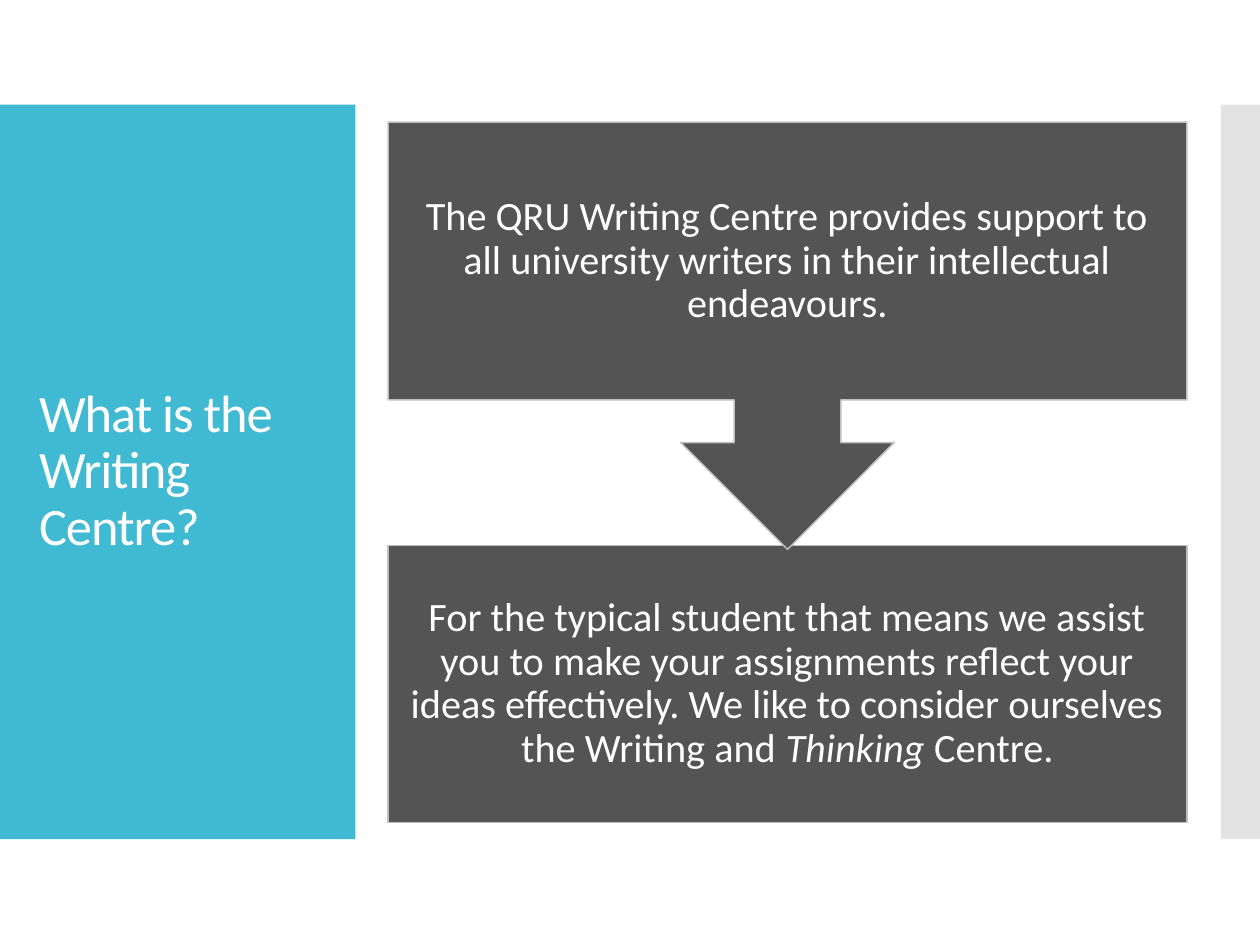
"""Build the Writing Centre slide with a title panel and two linked boxes."""
from pptx import Presentation
from pptx.dml.color import RGBColor
from pptx.enum.shapes import MSO_SHAPE
from pptx.enum.text import MSO_ANCHOR, MSO_AUTO_SIZE, PP_ALIGN
from pptx.oxml.ns import qn
from pptx.util import Inches, Pt
from lxml.etree import SubElement


class Theme:
    font = "Calibri"
    teal = RGBColor(0x40, 0xBA, 0xD2)
    side = RGBColor(0xC8, 0xC8, 0xC8)
    dark = RGBColor(0x54, 0x54, 0x54)
    edge = RGBColor(0xBF, 0xBF, 0xBF)
    white = RGBColor(0xFF, 0xFF, 0xFF)
    head = Pt(30)
    body = Pt(23)


def write(shape, *parts, size=Theme.body, align=PP_ALIGN.CENTER, inset=0.18, space=0):
    frame = shape.text_frame
    frame.word_wrap = True
    frame.auto_size = MSO_AUTO_SIZE.NONE
    frame.vertical_anchor = MSO_ANCHOR.MIDDLE
    frame.margin_left = frame.margin_right = Inches(inset)
    frame.margin_top = frame.margin_bottom = Inches(inset)
    para = frame.paragraphs[0]
    para.alignment = align
    para.line_spacing = 0.9
    for text, slant in parts:
        run = para.add_run()
        run.text = text
        run.font.name = Theme.font
        run.font.size = size
        run.font.italic = slant
        run.font.color.rgb = Theme.white
        if space:
            run.font._element.set("spc", str(space))


def draw(kind, left, top, width, height, fill, edge=None):
    shape = slide.shapes.add_shape(
        kind, Inches(left), Inches(top), Inches(width), Inches(height))
    shape.shadow.inherit = False
    shape.fill.solid()
    shape.fill.fore_color.rgb = fill
    if edge:
        shape.line.color.rgb = edge
        shape.line.width = Pt(0.85)
    else:
        shape.line.fill.background()
    return shape


deck = Presentation()
deck.slide_width, deck.slide_height = Inches(10), Inches(7.5)
slide = deck.slides.add_slide(deck.slide_layouts[5])

draw(MSO_SHAPE.RECTANGLE, 0, 0.83, 2.82, 5.83, Theme.teal)
strip = draw(MSO_SHAPE.RECTANGLE, 9.69, 0.83, 0.31, 5.83, Theme.side)
tint = strip.fill._xPr.find(qn("a:solidFill"))[0]
SubElement(tint, qn("a:alpha"), val="50000")

title = slide.shapes.title
title.left, title.top = Inches(0.21), Inches(1.23)
title.width, title.height = Inches(2.42), Inches(5.03)
write(title, ("What is the Writing Centre?", False),
      size=Theme.head, align=PP_ALIGN.LEFT, inset=0.1, space=-60)
slide.shapes._spTree.append(title._element)

lower = draw(MSO_SHAPE.RECTANGLE, 3.08, 4.33, 6.34, 2.2, Theme.dark, Theme.edge)
write(lower,
      ("For the typical student that means we assist you to make your assignments "
       "reflect your ideas effectively. We like to consider ourselves the Writing and ", False),
      ("Thinking", True),
      (" Centre.", False))

upper = draw(MSO_SHAPE.DOWN_ARROW_CALLOUT, 3.08, 0.97, 6.34, 3.39, Theme.dark, Theme.edge)
for spot, ratio in enumerate((0.25, 0.25, 0.25, 0.65)):
    upper.adjustments[spot] = ratio
write(upper, ("The QRU Writing Centre provides support to all university writers "
              "in their intellectual endeavours.", False))

deck.save("out.pptx")
